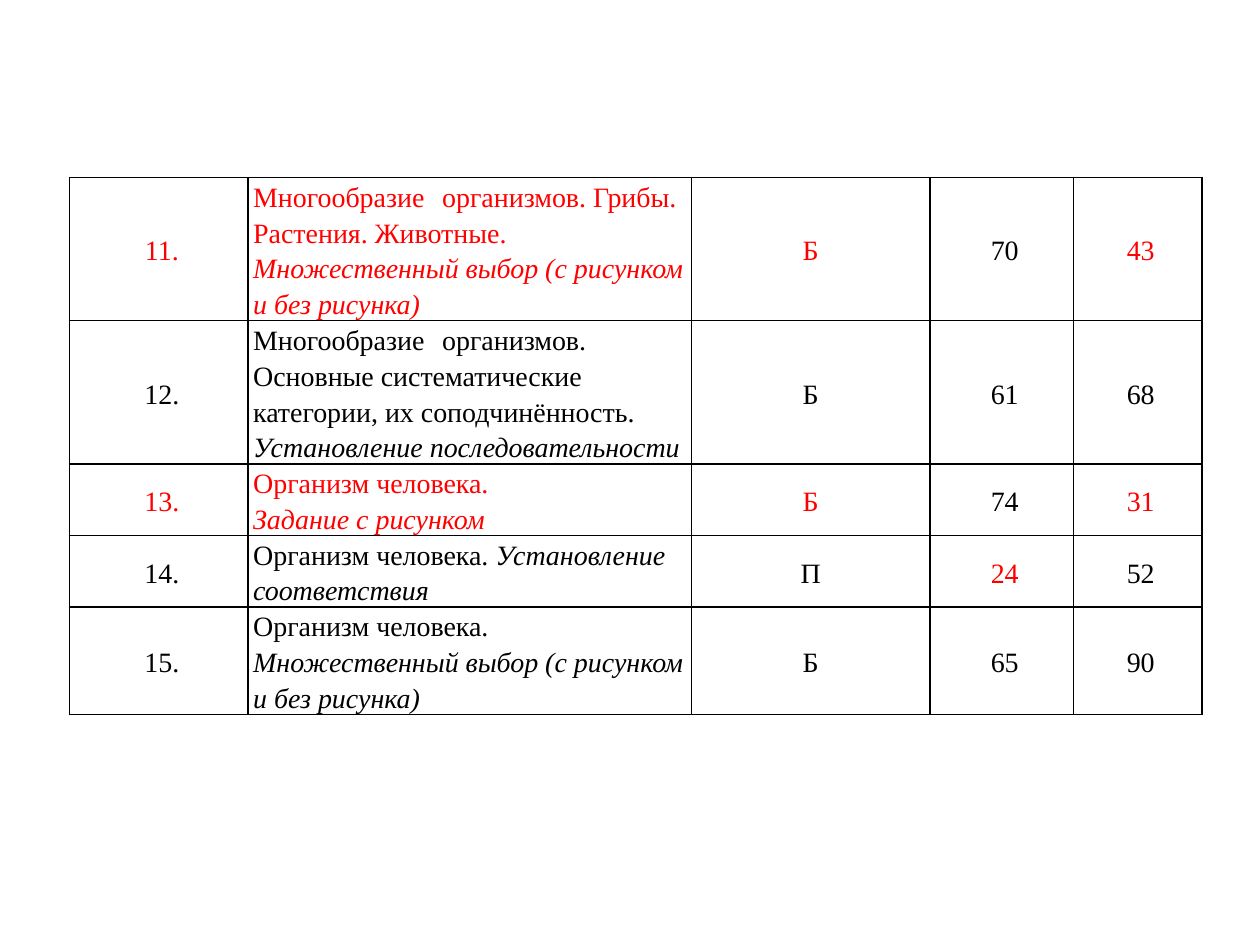
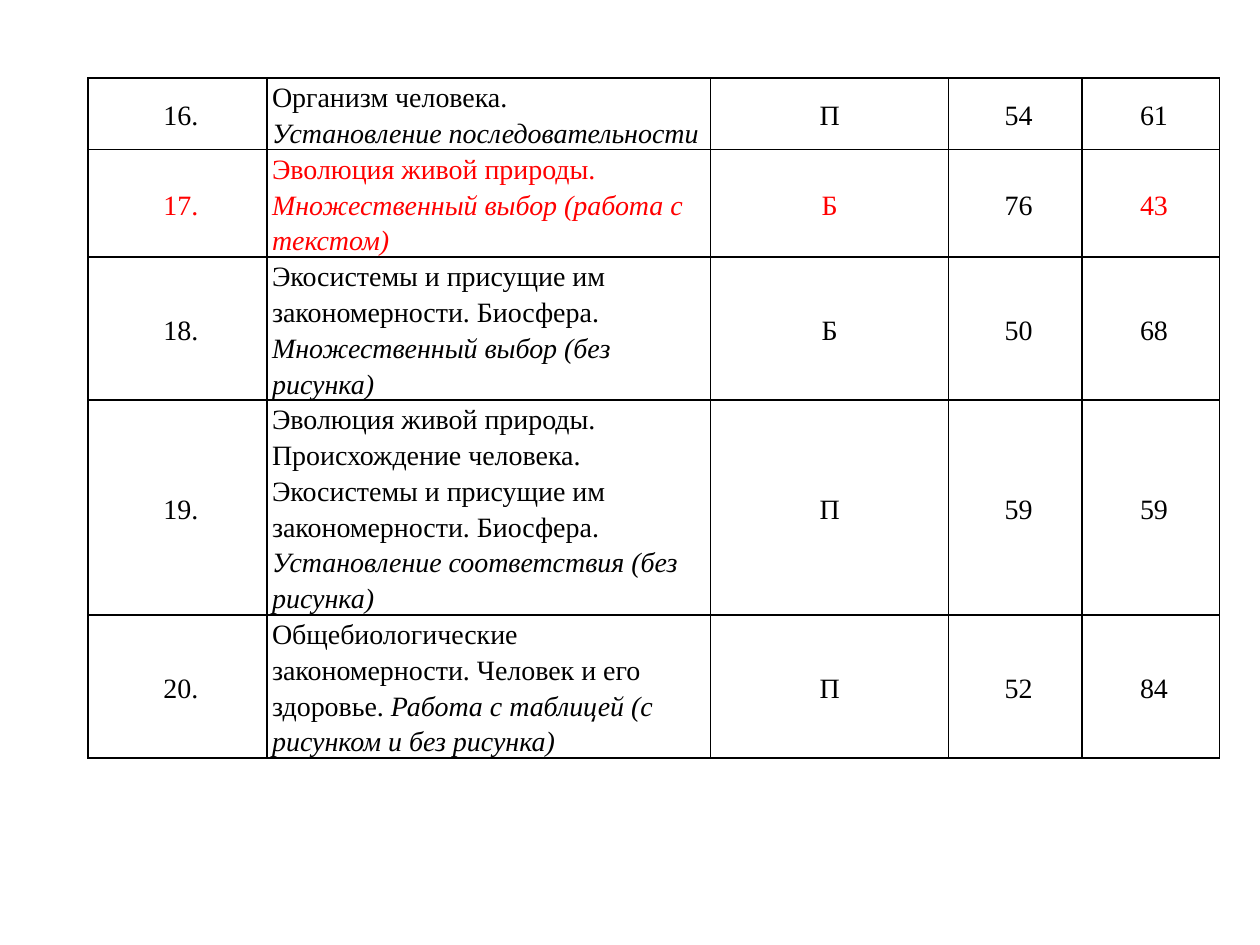
import pptx
import pptx.util
import pptx.dml.color
import pptx.enum.text
import pptx.oxml
import pptx.oxml.ns
import lxml.etree

Inches, Pt = pptx.util.Inches, pptx.util.Pt
PP_ALIGN = pptx.enum.text.PP_ALIGN

THEME = {
    "font": "Times New Roman", "size": 16, "spacing": 1.15,
    "text": "000000", "weak": "FF0000", "border": "000000", "border_pt": 1,
    "line_height": 0.28, "side_margin": 0.04, "tab": 2,
}

# Content: number, topic, task, task on its own line, level, two scores,
# columns marked as weak, lines of text in the row
NUMBER, TOPIC, LEVEL, FIRST, SECOND = range(5)
WEAK_ROW = {NUMBER, TOPIC, LEVEL, SECOND}

TABLES = [
    {"left": 0.55, "top": 1.41, "cols": [1.42, 3.52, 1.89, 1.14, 1.02], "rows": [
        ("11.", "Многообразие\tорганизмов. Грибы. Растения. Животные. ",
         "Множественный выбор (с рисунком и без рисунка)", False, "Б", "70", "43", WEAK_ROW, 4),
        ("12.", "Многообразие\tорганизмов. Основные систематические категории, их соподчинённость. ",
         "Установление последовательности", False, "Б", "61", "68", set(), 4),
        ("13.", "Организм человека.",
         "Задание с рисунком", True, "Б", "74", "31", WEAK_ROW, 2),
        ("14.", "Организм человека. ",
         "Установление соответствия", False, "П", "24", "52", {FIRST}, 2),
        ("15.", "Организм человека.",
         "Множественный выбор (с рисунком и без рисунка)", True, "Б", "65", "90", set(), 3),
    ]},
    {"left": 0.7, "top": 0.62, "cols": [1.42, 3.52, 1.89, 1.06, 1.09], "rows": [
        ("16.", "Организм человека.",
         "Установление последовательности", True, "П", "54", "61", set(), 2),
        ("17.", "Эволюция живой природы.",
         "Множественный выбор (работа с текстом)", True, "Б", "76", "43", WEAK_ROW, 3),
        ("18.", "Экосистемы и присущие им закономерности. Биосфера.",
         "Множественный выбор (без рисунка)", True, "Б", "50", "68", set(), 4),
        ("19.", "Эволюция живой природы. Происхождение человека. "
         "Экосистемы и присущие им закономерности. Биосфера.",
         "Установление соответствия (без рисунка)", True, "П", "59", "59", set(), 6),
        ("20.", "Общебиологические закономерности. Человек и его здоровье. ",
         "Работа с таблицей (с рисунком и без рисунка)", False, "П", "52", "84", set(), 4),
    ]},
]


def add_text(p, text, color=THEME["text"], italic=False, align=PP_ALIGN.LEFT, indent=0):
    """Append one run to a paragraph and format both."""
    p.alignment = align
    p.line_spacing = THEME["spacing"]
    pPr = p._p.get_or_add_pPr()
    pPr.set("marL", "0")
    pPr.set("indent", str(int(Inches(indent))))
    if "\t" in text:
        tabs = lxml.etree.SubElement(pPr, pptx.oxml.ns.qn("a:tabLst"))
        lxml.etree.SubElement(tabs, pptx.oxml.ns.qn("a:tab"),
                              pos=str(int(Inches(THEME["tab"]))), algn="l")
    r = p.add_run()
    r.text = text
    r.font.name = THEME["font"]
    r.font.size = Pt(THEME["size"])
    r.font.italic = italic
    r.font.color.rgb = pptx.dml.color.RGBColor.from_string(color)


def format_cell(cell):
    """Set margins, anchor, borders and an empty fill."""
    cell.margin_left = cell.margin_right = Inches(THEME["side_margin"])
    cell.margin_top = cell.margin_bottom = 0
    cell.vertical_anchor = pptx.enum.text.MSO_ANCHOR.MIDDLE
    tcPr = cell._tc.get_or_add_tcPr()
    for side in ("lnL", "lnR", "lnT", "lnB"):
        tcPr.append(pptx.oxml.parse_xml(
            f'<a:{side} {pptx.oxml.ns.nsdecls("a")} w="{int(Pt(THEME["border_pt"]))}">'
            f'<a:solidFill><a:srgbClr val="{THEME["border"]}"/></a:solidFill></a:{side}>'))
    cell.fill.background()


def fill_row(cells, row):
    number, topic, task, own_line, level, first, second, weak, _ = row
    colors = [THEME["weak" if c in weak else "text"] for c in range(len(cells))]
    for cell in cells:
        format_cell(cell)

    # Topic, then the task type in italics
    tf = cells[TOPIC].text_frame
    add_text(tf.paragraphs[0], topic, color=colors[TOPIC])
    p = tf.add_paragraph() if own_line else tf.paragraphs[0]
    add_text(p, task, color=colors[TOPIC], italic=True)

    # Centred columns
    for c, text in ((NUMBER, number), (LEVEL, level), (FIRST, first), (SECOND, second)):
        add_text(cells[c].text_frame.paragraphs[0], text, color=colors[c],
                 align=PP_ALIGN.CENTER, indent=-0.08 if c == LEVEL else 0.05)


def add_results(slide, left, top, cols, rows):
    heights = [row[-1] * THEME["line_height"] for row in rows]
    table = slide.shapes.add_table(len(rows), len(cols), Inches(left), Inches(top),
                                   Inches(sum(cols)), Inches(sum(heights))).table
    table.first_row = table.horz_banding = False
    for column, width in zip(table.columns, cols):
        column.width = Inches(width)
    for table_row, height, row in zip(table.rows, heights, rows):
        table_row.height = Inches(height)
        fill_row(list(table_row.cells), row)


def main():
    prs = pptx.Presentation()
    prs.slide_width, prs.slide_height = Inches(10), Inches(7.5)
    for results in TABLES:
        add_results(prs.slides.add_slide(prs.slide_layouts[6]), **results)
    prs.save("out.pptx")


if __name__ == "__main__":
    main()
